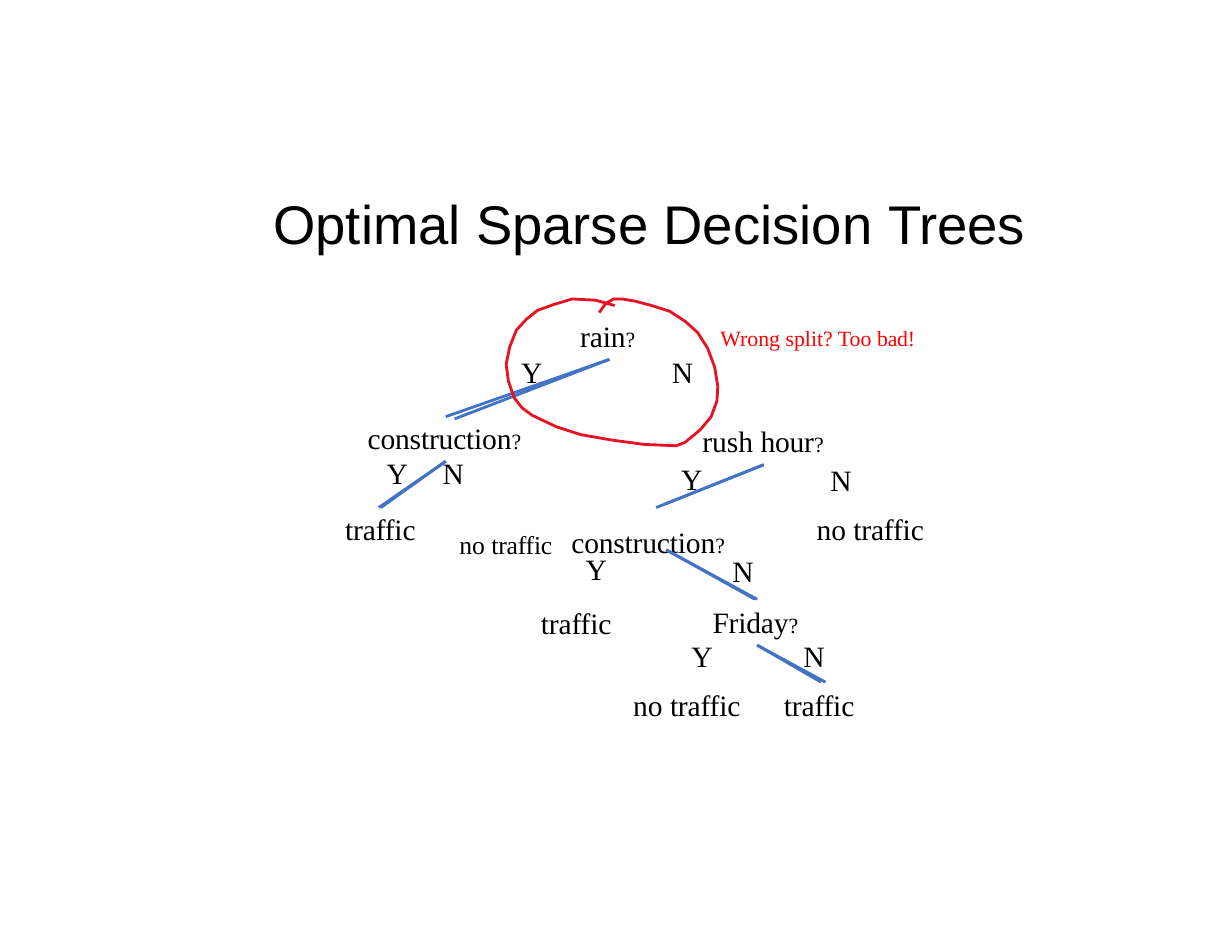
import pptx
import pptx.dml.color
import pptx.enum.shapes
import pptx.enum.text
import pptx.oxml.ns
import pptx.util
from lxml import etree

Cm, Pt = pptx.util.Cm, pptx.util.Pt
qn = pptx.oxml.ns.qn

THEME = {
    "edge": "4472C4",
    "loop": "E71224",
    "line": 1.8,
    "runs": {
        "plain": {"size": 19, "font": "Times New Roman", "color": "000000"},
        "tight": {"size": 19, "font": "Times New Roman", "color": "000000", "spc": -10},
        "pair": {"size": 19, "font": "Times New Roman", "color": "000000", "spc": -50},
        "mark": {"size": 14, "font": "Times New Roman", "color": "000000", "spc": -10},
        "low": {"size": 28.5, "font": "Times New Roman", "color": "000000", "baseline": -4000},
        "low tight": {"size": 28.5, "font": "Times New Roman", "color": "000000",
                      "spc": -10, "baseline": -4000},
        "note": {"size": 14, "font": "Times New Roman", "color": "FF0000"},
        "note tight": {"size": 14, "font": "Times New Roman", "color": "FF0000", "spc": -20},
        "title": {"size": 35, "font": "Arial", "color": "000000"},
        "title tight": {"size": 35, "font": "Arial", "color": "000000", "spc": -10},
    },
}

YES = [("Y", "plain")]
NO = [("N", "plain")]
TRAFFIC = [("traffic", "tight")]
NO_TRAFFIC = [("no ", "plain"), ("traffic", "tight")]
RAIN = [("rain", "tight"), ("?", "mark")]
CONSTRUCTION = [("construction", "tight"), ("?", "mark")]
RUSH_HOUR = [("rush ", "plain"), ("hour", "tight"), ("?", "mark")]
FRIDAY = [("Friday", "tight"), ("?", "mark")]

LABELS = [
    (13.13, 7.19, 1.35, RAIN),
    (11.79, 8, 0.56, YES),
    (15.21, 8, 0.56, NO),
    (18.49, 11.56, 2.57, NO_TRAFFIC),
    (18.8, 10.44, 0.56, NO),
    (8.31, 9.5, 3.63, CONSTRUCTION),
    (17.75, 15.54, 1.7, TRAFFIC),
    (14.33, 15.54, 2.57, NO_TRAFFIC),
    (18.19, 14.43, 0.56, NO),
    (15.65, 14.43, 0.56, YES),
    (16.31, 7.34, 4.62, [("Wrong split? Too ", "note"), ("bad!", "note tight")]),
]

BLOCKS = [
    ((15.42, 9.5, 3.33, 1.8), 0.1,
     [(0.51, 2.6, None, RUSH_HOUR), (0.03, 1.7, None, YES)]),
    ((7.8, 9.8, 3.66, 2.62), 0.51,
     [(0.97, 14.4, 3.15, [("Y\tN", "pair")]), (0.03, 13.4, None, TRAFFIC)]),
    ((10.39, 11.51, 6.53, 0.86), 0.03,
     [(0.03, 1, 2.92, [("no ", "low"), ("traffic\t", "low tight")] + CONSTRUCTION)]),
    ((12.24, 12.04, 1.7, 2.51), 0.46,
     [(1.04, 12.8, None, YES), (0.03, 11.8, None, TRAFFIC)]),
    ((16.13, 12.12, 2.06, 2.41), 0.41,
     [(0.48, 11.6, None, NO), (0.03, 10.6, None, FRIDAY)]),
    ((1.42, 3.73, 25.76, 2.18), 0.58,
     [(4.78, 1, None, [("Optimal Sparse Decision ", "title"), ("Trees", "title tight")])]),
]

EDGES = [
    ((13.82, 8.15), [(10.11, 9.45), (10.31, 9.5)]),
    ((17.32, 10.54), [(15.09, 11.43), (14.88, 11.51)]),
    ((10.11, 10.46), [(8.64, 11.51), (8.59, 11.51)]),
    ((17.17, 14.63), [(18.62, 15.47), (18.72, 15.47)]),
    ((15.11, 12.47), [(17.17, 13.59), (17.12, 13.59)]),
]

LOOP = [
    (13.94, 6.93), (13.69, 6.86), (13.51, 6.81), (12.98, 6.78), (12.55, 6.91),
    (12.19, 7.04), (11.94, 7.24), (11.71, 7.49), (11.56, 7.87), (11.48, 8.26),
    (11.53, 8.64), (11.66, 9.02), (11.84, 9.25), (12.07, 9.42), (12.62, 9.68),
    (13.18, 9.86), (13.87, 9.98), (14.61, 10.08), (15.34, 10.11), (15.54, 10.03),
    (15.88, 9.75), (16.13, 9.45), (16.26, 9.09), (16.28, 8.76), (16.21, 8.33),
    (16.05, 7.9), (15.82, 7.54), (15.54, 7.29), (15.19, 7.06), (14.78, 6.93),
    (14.4, 6.83), (14.1, 6.78), (13.92, 6.78), (13.74, 6.88), (13.59, 7.09),
]


def rgb(value):
    return pptx.dml.color.RGBColor.from_string(value)


def add_run(p, text, style):
    look = THEME["runs"][style]
    r = p.add_run()
    r.text = text
    r.font.size = Pt(look["size"])
    r.font.name = look["font"]
    r.font.color.rgb = rgb(look["color"])
    for key in ("spc", "baseline"):
        if key in look:
            r.font._element.set(key, str(look[key]))


def add_text(s, box, top, paragraphs):
    tf = s.shapes.add_textbox(*map(Cm, box)).text_frame
    tf.word_wrap = True
    tf.auto_size = pptx.enum.text.MSO_AUTO_SIZE.SHAPE_TO_FIT_TEXT
    tf.margin_left = tf.margin_right = tf.margin_bottom = 0
    tf.margin_top = Cm(top)
    for i, (indent, before, tab, runs) in enumerate(paragraphs):
        p = tf.add_paragraph() if i else tf.paragraphs[0]
        p.space_before = Pt(before)
        pPr = p._p.get_or_add_pPr()
        pPr.set("marL", str(Cm(indent)))
        pPr.set("indent", "0")
        if tab:
            tabs = etree.SubElement(pPr, qn("a:tabLst"))
            etree.SubElement(tabs, qn("a:tab"), pos=str(Cm(tab)), algn="l")
        for text, style in runs:
            add_run(p, text, style)


def add_edge(s, start, end):
    c = s.shapes.add_connector(
        pptx.enum.shapes.MSO_CONNECTOR.STRAIGHT, *map(Cm, start + end))
    c.line.color.rgb = rgb(THEME["edge"])
    c.line.width = Pt(THEME["line"])
    etree.SubElement(c._element.spPr, qn("a:effectLst"))


def add_loop(s, points):
    points = [(Cm(x), Cm(y)) for x, y in points]
    builder = s.shapes.build_freeform(*points[0])
    builder.add_line_segments(points[1:], close=False)
    sp = builder.convert_to_shape()
    sp.shadow.inherit = False
    sp.fill.background()
    sp.line.color.rgb = rgb(THEME["loop"])
    sp.line.width = Pt(THEME["line"])


def main():
    prs = pptx.Presentation()
    prs.slide_width, prs.slide_height = Cm(27.94), Cm(21.59)
    s = prs.slides.add_slide(prs.slide_layouts[6])
    for left, top, width, runs in LABELS:
        add_text(s, (left, top, width, 0.86), 0.03, [(0.03, 1, None, runs)])
    for box, top, paragraphs in BLOCKS:
        add_text(s, box, top, paragraphs)
    for start, ends in EDGES:
        for end in ends:
            add_edge(s, start, end)
    add_loop(s, LOOP)
    prs.save("out.pptx")


if __name__ == "__main__":
    main()
